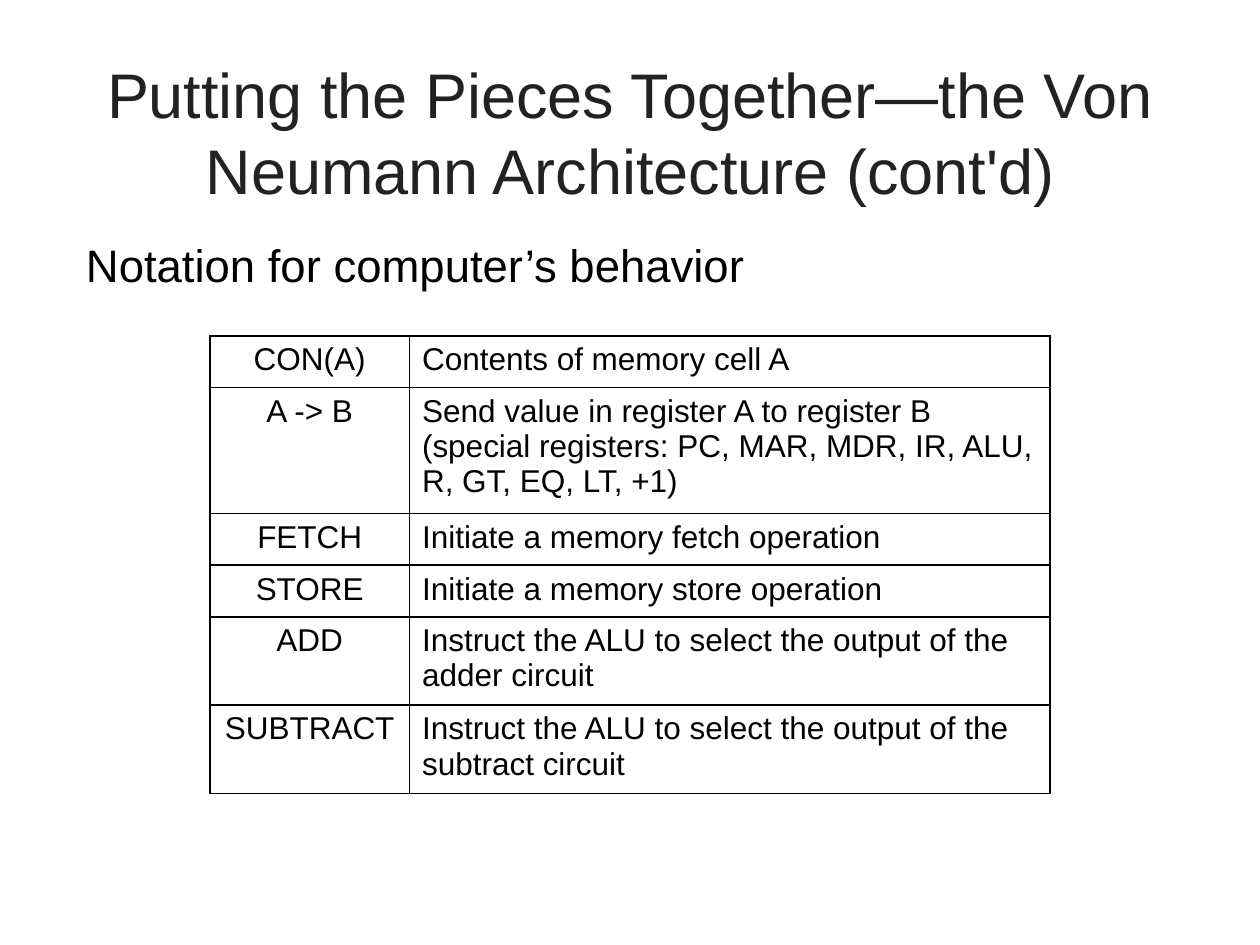
from dataclasses import dataclass

from lxml.etree import SubElement
from pptx import Presentation
from pptx.dml.color import RGBColor
from pptx.enum.text import MSO_ANCHOR, PP_ALIGN
from pptx.oxml.ns import qn
from pptx.util import Pt


@dataclass(frozen=True)
class Theme:
    font: str = "Arial"
    title_color: str = "222222"
    ink: str = "000000"
    title_size: int = 36
    body_size: int = 26
    table_size: int = 18
    border: int = 1


THEME = Theme()
COLUMN_WIDTHS = (114, 366)
NOTATION = [
    (29.5, "CON(A)", "Contents of memory cell A"),
    (72, "A -> B", "Send value in register A to register B\n"
     "(special registers: PC, MAR, MDR, IR, ALU, R, GT, EQ, LT, +1)"),
    (29.5, "FETCH", "Initiate a memory fetch operation"),
    (29.5, "STORE", "Initiate a memory store operation"),
    (50.4, "ADD", "Instruct the ALU to select the output of the adder circuit"),
    (50.4, "SUBTRACT",
     "Instruct the ALU to select the output of the subtract circuit"),
]


def write(frame, text, size, color, align):
    frame.text = text
    frame.word_wrap = True
    for para in frame.paragraphs:
        para.alignment = align
        for span in para.runs:
            span.font.name = THEME.font
            span.font.size = Pt(size)
            span.font.color.rgb = RGBColor.from_string(color)


def add_title(page, left, top, width, height):
    box = page.shapes.add_textbox(Pt(left), Pt(top), Pt(width), Pt(height))
    box.text_frame.vertical_anchor = MSO_ANCHOR.MIDDLE
    write(box.text_frame,
          "Putting the Pieces Together—the Von Neumann Architecture (cont'd)",
          THEME.title_size, THEME.title_color, PP_ALIGN.CENTER)


def add_lead(page, left, top, width, height):
    box = page.shapes.add_textbox(Pt(left), Pt(top), Pt(width), Pt(height))
    write(box.text_frame, "Notation for computer’s behavior",
          THEME.body_size, THEME.ink, PP_ALIGN.LEFT)
    properties = box.text_frame.paragraphs[0]._p.get_or_add_pPr()
    properties.set("marL", str(Pt(27)))
    properties.set("indent", str(Pt(-27)))


def outline_cell(cell):
    """Draw all four borders; they must precede the fill in the cell's XML."""
    properties = cell._tc.get_or_add_tcPr()
    for index, side in enumerate(("a:lnL", "a:lnR", "a:lnT", "a:lnB")):
        line = SubElement(properties, qn(side), w=str(Pt(THEME.border)))
        fill = SubElement(line, qn("a:solidFill"))
        SubElement(fill, qn("a:srgbClr"), val=THEME.ink)
        properties.insert(index, line)


def add_notation_table(page, left, top, width, height):
    table = page.shapes.add_table(len(NOTATION), len(COLUMN_WIDTHS), Pt(left),
                                  Pt(top), Pt(width), Pt(height)).table
    table.first_row = table.horz_banding = False
    for column, column_width in zip(table.columns, COLUMN_WIDTHS):
        column.width = Pt(column_width)
    for row, (row_height, *texts) in zip(table.rows, NOTATION):
        row.height = Pt(row_height)
        for cell, text, align in zip(row.cells, texts,
                                     (PP_ALIGN.CENTER, PP_ALIGN.LEFT)):
            write(cell.text_frame, text, THEME.table_size, THEME.ink, align)
            cell.fill.background()
            outline_cell(cell)


def main():
    deck = Presentation()
    deck.slide_width, deck.slide_height = Pt(720), Pt(540)
    page = deck.slides.add_slide(deck.slide_layouts[6])
    add_title(page, 42, 30, 636, 90)
    add_lead(page, 42, 132, 636, 60)
    add_notation_table(page, 120, 192, sum(COLUMN_WIDTHS),
                       sum(row[0] for row in NOTATION))
    deck.save("out.pptx")


if __name__ == "__main__":
    main()
